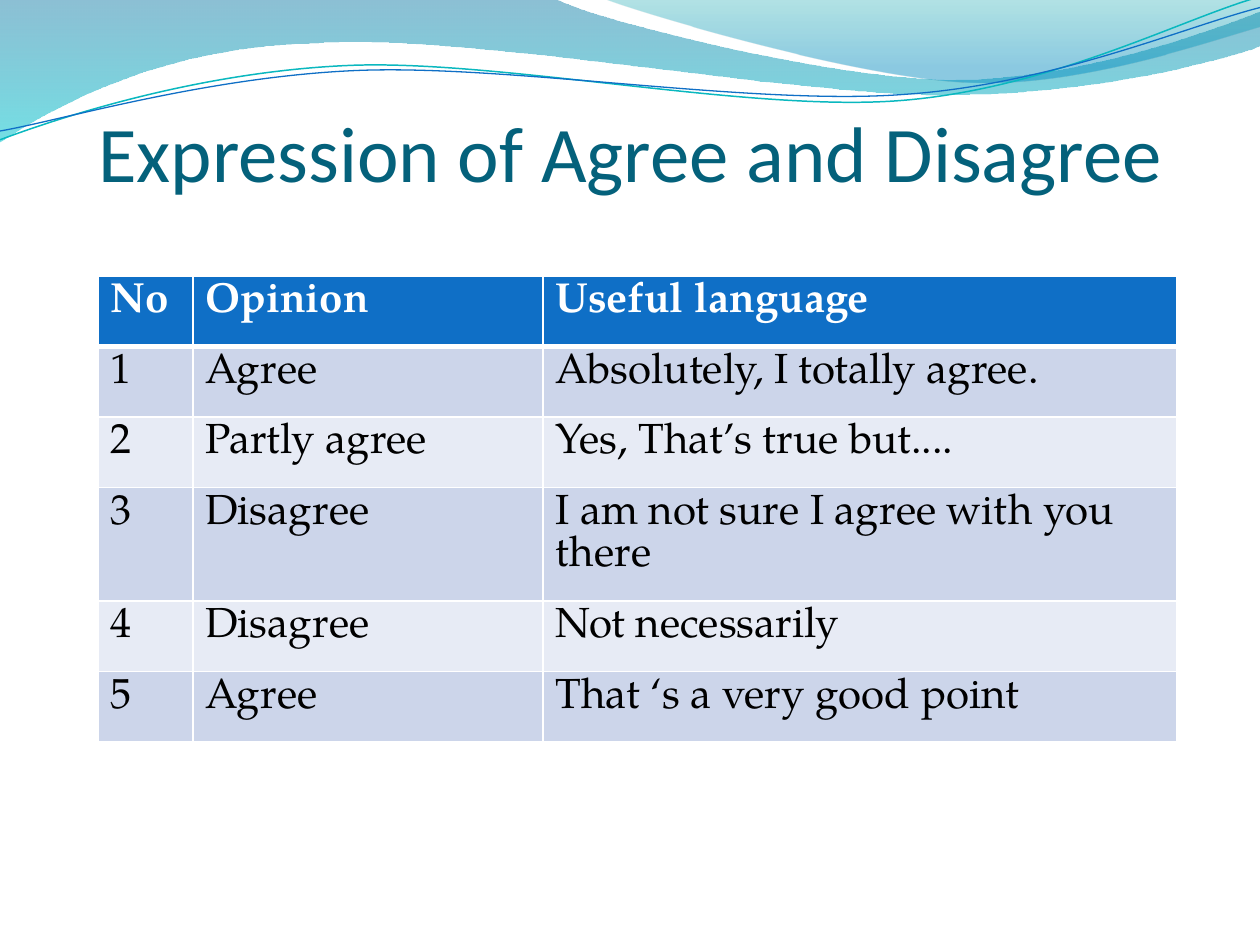
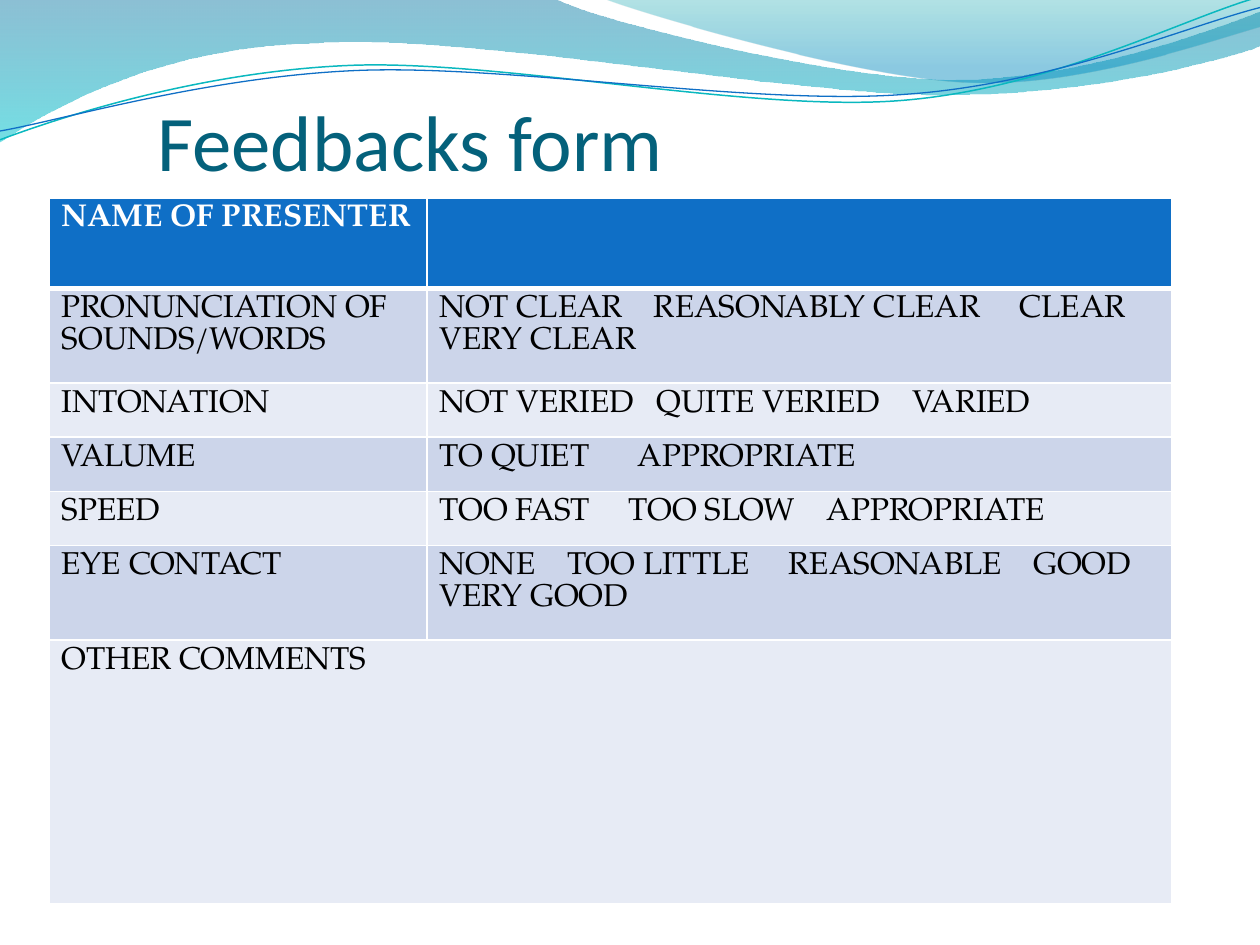
"""Build two classroom slides: agreement expressions and a feedback form."""
from lxml.etree import SubElement
from pptx import Presentation
from pptx.dml.color import RGBColor
from pptx.enum.text import MSO_ANCHOR as Anchor, PP_ALIGN as Align
from pptx.oxml.ns import qn
from pptx.util import Inches, Pt

BLUE, TEAL, WHITE, BLACK = "0F6FC6", "04617B", "FFFFFF", "000000"
BANDS = ["E7EBF5", "CCD5EA"]
TITLE_FONT, TABLE_FONT = "Calibri", "TeX Gyre Pagella"

WAVES = [
    {"start": (0, 0), "closed": True, "segments": [
        [(4.4, -0.01)],
        [(4.76, 0.17), (6.64, 0.63), (7.58, 0.63)],
        [(8.53, 0.63), (9.58, 0.26), (10, 0.09)],
        [(10.01, 0.36)],
        [(9.83, 0.44), (8.7, 0.76), (7.46, 0.75)],
        [(6.22, 0.75), (3.82, 0.28), (2.57, 0.34)],
        [(1.29, 0.36), (0.46, 0.83), (-0.01, 1.13)],
        [(0, 0)]],
     "gradient": [(0, "0074A1", 45), (1, "00C6CF", 55)]},
    {"start": (4.79, -0.01), "closed": True, "segments": [
        [(5.09, 0.11), (6.82, 0.62), (7.69, 0.65)],
        [(8.56, 0.69), (9.61, 0.32), (10, 0.21)],
        [(10, 0)],
        [(4.79, -0.01)]],
     "gradient": [(0, "00A1A9", 30), (0.8, "008BBF", 45)]},
    {"start": (0, 1.11), "closed": False, "segments": [
        [(0.48, 0.93), (1.58, 0.57), (2.77, 0.52)],
        [(3.95, 0.47), (5.93, 0.89), (7.13, 0.8)],
        [(8.33, 0.71), (9.38, 0.15), (9.98, -0.02)]],
     "line": ("0AB8BF", 0.85)},
    {"start": (0, 1.04), "closed": False, "segments": [
        [(0.47, 0.96), (1.64, 0.61), (2.83, 0.56)],
        [(4.03, 0.51), (5.97, 0.84), (7.17, 0.75)],
        [(8.36, 0.67), (9.41, 0.21), (10, 0.06)]],
     "line": (BLUE, 0.75)},
]

SLIDES = [
    {"title": "Expression of Agree and Disagree",
     "title_box": (0.5, 0.78, 9, 0.79), "title_align": Align.CENTER,
     "table_at": (0.78, 2.19), "text_size": 24,
     "columns": [0.75, 2.78, 5.03],
     "heights": [0.56, 0.56, 0.56, 0.77, 0.56, 0.56],
     "rows": [
         ["No", "Opinion", "Useful language"],
         ["1", "Agree", "Absolutely, I totally agree."],
         ["2", "Partly agree", "Yes, That’s true but...."],
         ["3", "Disagree", "I am not sure I agree with you there"],
         ["4", "Disagree", "Not necessarily"],
         ["5", "Agree", "That ‘s a very good point"]],
     "tabs": {}},
    {"title": "Feedbacks form",
     "title_box": (1.25, 0.71, 4.3, 0.78), "title_align": Align.LEFT,
     "table_at": (0.39, 1.57), "text_size": 18,
     "columns": [3, 5.91],
     "heights": [0.72, 0.75, 0.43, 0.43, 0.43, 0.75, 2.09],
     "rows": [
         ["NAME OF PRESENTER", ""],
         ["PRONUNCIATION OF SOUNDS/WORDS",
          "NOT CLEAR\tREASONABLY CLEAR\tCLEAR VERY CLEAR"],
         ["INTONATION", "NOT VERIED\tQUITE VERIED\tVARIED"],
         ["VALUME", "TO QUIET\tAPPROPRIATE"],
         ["SPEED", "TOO FAST\tTOO SLOW\tAPPROPRIATE"],
         ["EYE CONTACT", "NONE\tTOO LITTLE\tREASONABLE\tGOOD VERY GOOD"],
         ["OTHER COMMENTS"]],
     "tabs": {1: [1.7, 4.6], 2: [1.72, 3.75], 3: [1.57],
              4: [1.5, 3.07], 5: [1.01, 2.77, 4.71]}},
]


def color(value):
    return RGBColor.from_string(value)


def write_text(frame, text, *, size, font, fill, bold=False, align=Align.LEFT, tabs=()):
    paragraph = frame.paragraphs[0]
    paragraph.alignment = align
    if tabs:
        tab_list = SubElement(paragraph._p.get_or_add_pPr(), qn("a:tabLst"))
        for stop in tabs:
            SubElement(tab_list, qn("a:tab"), pos=str(Inches(stop)), algn="l")
    run = paragraph.add_run()
    run.text = text
    run.font.size = Pt(size)
    run.font.name = font
    run.font.bold = bold
    run.font.color.rgb = color(fill)


presentation = Presentation()
presentation.slide_width, presentation.slide_height = Inches(10), Inches(7.5)

for content in SLIDES:
    slide = presentation.slides.add_slide(presentation.slide_layouts[6])

    for wave in WAVES:
        segments = wave["segments"]
        start, *ends = [(Inches(x), Inches(y))
                        for x, y in [wave["start"], *(segment[-1] for segment in segments)]]
        builder = slide.shapes.build_freeform(*start)
        builder.add_line_segments(ends, close=wave["closed"])
        shape = builder.convert_to_shape()
        shape.shadow.inherit = False
        edges = list(shape._element.iter(qn("a:lnTo")))
        for edge, segment in zip(edges, segments):
            if len(segment) == 3:
                edge.clear()
                edge.tag = qn("a:cubicBezTo")
                for x, y in segment:
                    SubElement(edge, qn("a:pt"), x=str(Inches(x) - shape.left), y=str(Inches(y) - shape.top))
        if wave["closed"]:
            shape.line.fill.background()
            shape.fill.gradient()
            shape.fill.gradient_angle = 270
            for stop, (position, tint, _) in zip(shape.fill.gradient_stops, wave["gradient"]):
                stop.position = position
                stop.color.rgb = color(tint)
            tints = shape._element.iter(qn("a:srgbClr"))
            for element, (_, _, opacity) in zip(tints, wave["gradient"]):
                SubElement(element, qn("a:alpha"), val=str(opacity * 1000))
        else:
            shape.fill.background()
            line_color, line_width = wave["line"]
            shape.line.color.rgb = color(line_color)
            shape.line.width = Pt(line_width)

    title = slide.shapes.add_textbox(*map(Inches, content["title_box"])).text_frame
    title.word_wrap = True
    title.vertical_anchor = Anchor.BOTTOM
    title.margin_left = title.margin_right = title.margin_bottom = 0
    title.margin_top = Inches(0.05)
    write_text(title, content["title"], size=45, font=TITLE_FONT, fill=TEAL, align=content["title_align"])

    rows, columns, heights = content["rows"], content["columns"], content["heights"]
    left, top = content["table_at"]
    table = slide.shapes.add_table(len(rows), len(columns), Inches(left), Inches(top),
                                   Inches(sum(columns)), Inches(sum(heights))).table
    for column, width in zip(table.columns, columns):
        column.width = Inches(width)
    for row, height in zip(table.rows, heights):
        row.height = Inches(height)

    for row_index, texts in enumerate(rows):
        header = row_index == 0
        if len(texts) < len(columns):
            table.cell(row_index, 0).merge(table.cell(row_index, len(columns) - 1))
        for column_index in range(len(columns)):
            cell = table.cell(row_index, column_index)
            properties = cell._tc.get_or_add_tcPr()
            for side in "LRTB":
                thick = (row_index, side) in [(0, "B"), (1, "T")]
                border = SubElement(properties, qn(f"a:ln{side}"), w=str(Pt(3 if thick else 1)))
                border_fill = SubElement(border, qn("a:solidFill"))
                SubElement(border_fill, qn("a:srgbClr"), val=WHITE)
            cell.fill.solid()
            cell.fill.fore_color.rgb = color(BLUE if header else BANDS[row_index % 2])
            if column_index < len(texts) and texts[column_index]:
                write_text(cell.text_frame, texts[column_index], size=content["text_size"],
                           font=TABLE_FONT, fill=WHITE if header else BLACK, bold=header,
                           tabs=content["tabs"].get(row_index, ()) if column_index == 1 else ())

presentation.save("out.pptx")
